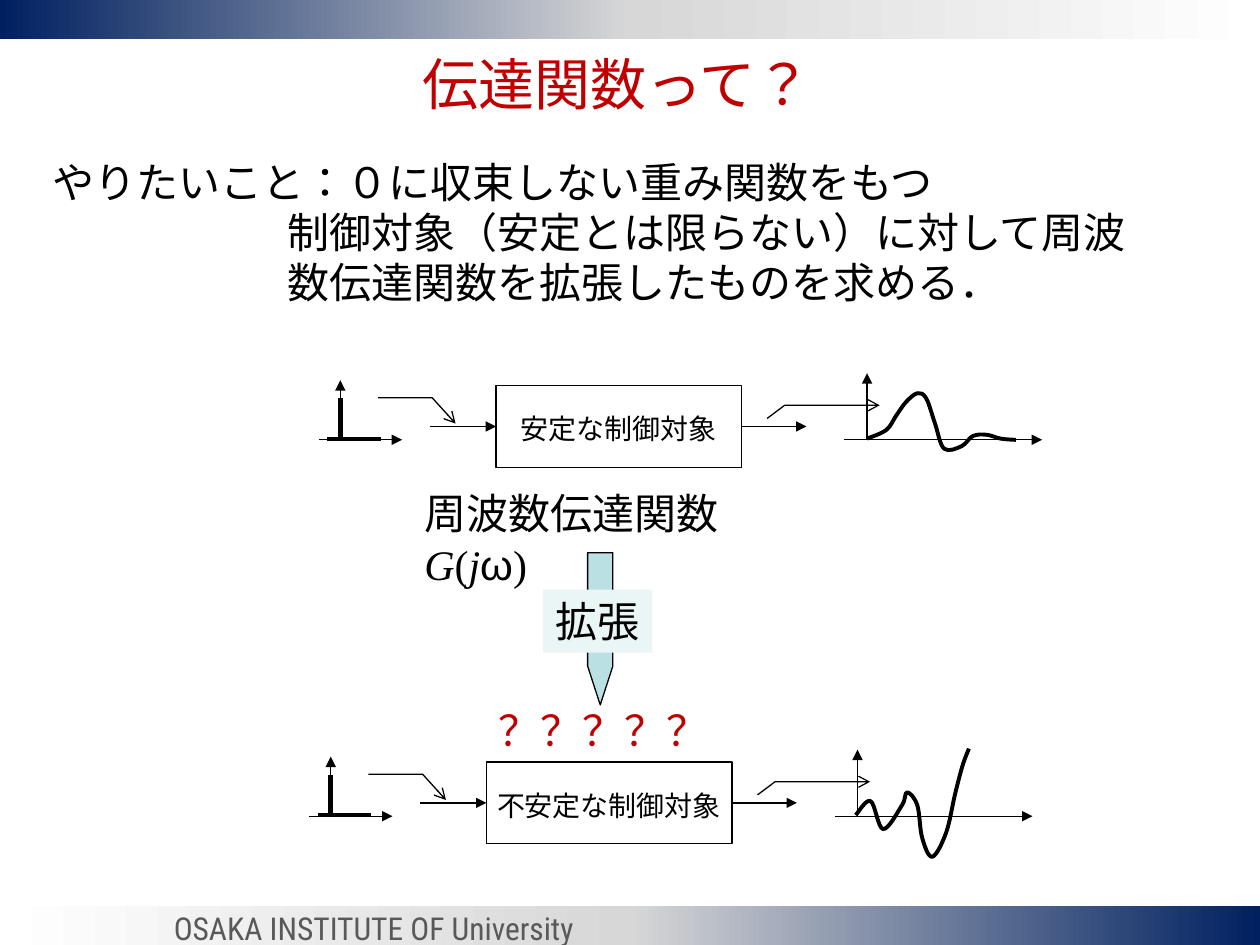
from dataclasses import dataclass

from lxml.etree import SubElement
from pptx import Presentation
from pptx.dml.color import RGBColor as RGB
from pptx.enum.lang import MSO_LANGUAGE_ID as Lang
from pptx.enum.shapes import MSO_CONNECTOR as Conn, MSO_SHAPE as Shape
from pptx.enum.text import MSO_ANCHOR as Anchor, PP_ALIGN as Align
from pptx.oxml.ns import qn
from pptx.util import Pt


@dataclass(frozen=True)
class Theme:
    sans: str = "Arial"
    serif: str = "Times New Roman"
    narrow: str = "Roboto Condensed"
    ink: str = "000000"
    red: str = "C00000"
    grey: str = "595959"
    aqua: str = "BBE0E3"
    pale: str = "EAF5F6"
    fade: tuple = ((0, "002060"), (50, "D7D7D7"), (100, "FFFFFF"))
    title: int = 32
    body: int = 24
    foot: int = 18
    label: int = 16
    thin: float = 0.75
    bold: float = 2.25
    heavy: float = 3


T = Theme()

# Offsets from the origin of the output graph
DECAY = [(0, 0), (11, -5), (16.5, -13), (22.3, -21), (28.8, -26), (33.8, -23),
         (38.8, -8.7), (44, 5.7), (54, 4.3), (60.4, -1.5), (68.4, -2.2),
         (76.3, 0), (85, 0.7)]
GROW = [(-1, 0), (7.5, -8), (14.7, 8), (25.5, -5.7), (28.4, -13), (34.2, -5.7),
        (37, 13), (42.8, 23.8), (50.7, 10), (55.8, -12), (60, -28), (63.7, -38)]


def add_run(para, text, size, color=T.ink, font=T.sans, italic=False):
    run = para.add_run()
    run.text = text
    run.font.size, run.font.name, run.font.italic = Pt(size), font, italic
    run.font.color.rgb = RGB.from_string(color)
    run.font.language_id = Lang.JAPANESE


def add_text(slide, x, y, w, h, wrap=True):
    """Add an empty text box and return its frame and first paragraph."""
    frame = slide.shapes.add_textbox(Pt(x), Pt(y), Pt(w), Pt(h)).text_frame
    frame.word_wrap = wrap
    return frame, frame.paragraphs[0]


def add_box(slide, kind, x, y, w, h, fill=None, line=None):
    box = slide.shapes.add_shape(kind, Pt(x), Pt(y), Pt(w), Pt(h))
    box.shadow.inherit = False
    if fill:
        box.fill.solid()
        box.fill.fore_color.rgb = RGB.from_string(fill)
    else:
        box.fill.background()
    if line:
        box.line.color.rgb = RGB.from_string(line)
        box.line.width = Pt(T.thin)
    else:
        box.line.fill.background()
    return box


def add_band(slide, y, turn=0):
    band = add_box(slide, Shape.RECTANGLE, 0, y, 720, 22.3)
    band.rotation = turn
    band.fill.gradient()
    band.fill.gradient_angle = 0
    stops = band._element.spPr.find(".//" + qn("a:gsLst"))
    stops.clear()
    for pos, color in T.fade:
        stop = SubElement(stops, qn("a:gs"), pos=str(pos * 1000))
        SubElement(stop, qn("a:srgbClr"), val=color)


def ink_line(shape, width, head=None):
    shape.line.color.rgb = RGB.from_string(T.ink)
    shape.line.width = Pt(width)
    if head:
        ln = shape._element.spPr.find(qn("a:ln"))
        SubElement(ln, qn("a:tailEnd"), type=head)


def add_line(slide, x1, y1, x2, y2, width=T.thin, head="triangle"):
    line = slide.shapes.add_connector(Conn.STRAIGHT, Pt(x1), Pt(y1), Pt(x2), Pt(y2))
    ink_line(line, width, head)
    SubElement(line._element.spPr, qn("a:effectLst"))
    return line


def add_trace(slide, x, y, points, width=T.thin, head=None):
    """Draw an open outline through points given as offsets from x, y."""
    spots = [(Pt(x + dx), Pt(y + dy)) for dx, dy in points]
    pen = slide.shapes.build_freeform(*spots[0])
    pen.add_line_segments(spots[1:], close=False)
    trace = pen.convert_to_shape()
    trace.shadow.inherit = False
    trace.fill.background()
    ink_line(trace, width, head)
    return trace


def bend(trace):
    """Turn the straight segments into curves through the same points."""
    geom = trace._element.spPr.find(qn("a:custGeom"))
    knots = [(int(p.get("x")), int(p.get("y"))) for p in geom.iter(qn("a:pt"))]
    ends = [knots[0], *knots, knots[-1]]
    legs = list(geom.iter(qn("a:lnTo")))
    for leg, a, b, c, d in zip(legs, ends, ends[1:], ends[2:], ends[3:]):
        leg.clear()
        leg.tag = qn("a:cubicBezTo")
        first = [q + (r - p) / 6 for p, q, r in zip(a, b, c)]
        last = [r - (s - q) / 6 for q, r, s in zip(b, c, d)]
        for px, py in (first, last, c):
            SubElement(leg, qn("a:pt"), x=str(round(px)), y=str(round(py)))


def add_plant(slide, x, y, label, curve):
    """Draw impulse, block and response; x, y is the block's corner."""
    wide, high = 140.4, 46.8
    box = add_box(slide, Shape.RECTANGLE, x, y, wide, high, line=T.ink)
    mid, base, right = y + high / 2, y + 31, x + wide
    add_line(slide, x - 38, mid, x, mid).end_connect(box, 1)
    add_line(slide, right, mid, right + 37, mid).begin_connect(box, 3)

    zero = x - 89
    add_line(slide, zero - 12.2, base, zero + 35.3, base)
    add_line(slide, zero, base, zero, base - 34)
    add_line(slide, zero - 7.5, base - 0.6, zero + 23, base - 0.6, T.bold, None)
    add_line(slide, zero, base - 0.6, zero, base - 23.8, T.heavy, None)

    start = x + 212
    add_line(slide, start - 13, base, start + 100, base)
    add_line(slide, start, base, start, base - 38)
    bend(add_trace(slide, start, base - 0.6, curve, T.bold))

    add_trace(slide, x - 67.5, y + 7, [(0, 0), (31, 0), (44.3, 14.7)], head="arrow")
    add_trace(slide, right + 14.5, y + 18.8, [(0, 0), (10, -7.5), (64.3, -7.5)],
              head="arrow")

    span = T.label * len(label) + 14.4
    _, para = add_text(slide, x + (wide - span) / 2, y + 11.6, span, 26.6, False)
    add_run(para, label, T.label)


def add_goal(slide):
    frame, para = add_text(slide, 23, 85.7, 667, 94.3)
    add_run(para, "やりたいこと：０に収束しない重み関数をもつ", T.body)
    for text in ("制御対象（安定とは限らない）に対して周波",
                 "数伝達関数を拡張したものを求める．"):
        para = frame.add_paragraph()
        para._p.get_or_add_pPr().set("marL", str(Pt(134)))
        add_run(para, text, T.body)


def add_gain(slide):
    frame, para = add_text(slide, 235.4, 275.3, 246, 36)
    frame.margin_right = Pt(60)
    add_run(para, "周波数伝達関数", T.body)
    for text, font, italic in (("G", T.serif, True), ("(", T.serif, False),
                               ("j", T.serif, True), ("ω", T.sans, False),
                               (")", T.serif, False)):
        add_run(para, text, T.body, font=font, italic=italic)


def add_step(slide):
    arrow = add_box(slide, Shape.PENTAGON, 299.5, 352.1, 87, 14.4, T.aqua, T.ink)
    arrow.adjustments[0] = 1.54
    arrow.rotation = 90
    note = add_box(slide, Shape.RECTANGLE, 310.3, 337, 62.6, 36, T.pale)
    frame = note.text_frame
    frame.word_wrap = False
    frame.vertical_anchor = Anchor.TOP
    para = frame.paragraphs[0]
    para.alignment = Align.CENTER
    add_run(para, "拡張", T.body)


def main():
    deck = Presentation()
    deck.slide_width, deck.slide_height = Pt(720), Pt(540)
    slide = deck.slides.add_slide(deck.slide_layouts[6])
    add_band(slide, 517.7, 180)
    add_band(slide, 0)
    _, foot = add_text(slide, 92.2, 516.2, 279.4, 28.8)
    add_run(foot, "OSAKA INSTITUTE OF University", T.foot, T.grey, T.narrow)
    _, title = add_text(slide, 202.3, 24.5, 273, 46)
    add_run(title, "　伝達関数って？", T.title, T.red)
    add_goal(slide)
    add_plant(slide, 283.5, 220.3, "安定な制御対象", DECAY)
    add_gain(slide)
    add_plant(slide, 278, 435.4, "不安定な制御対象", GROW)
    _, doubt = add_text(slide, 278, 399, 136, 36)
    add_run(doubt, "？？？？？", T.body, T.red)
    add_step(slide)
    deck.save("out.pptx")


if __name__ == "__main__":
    main()
